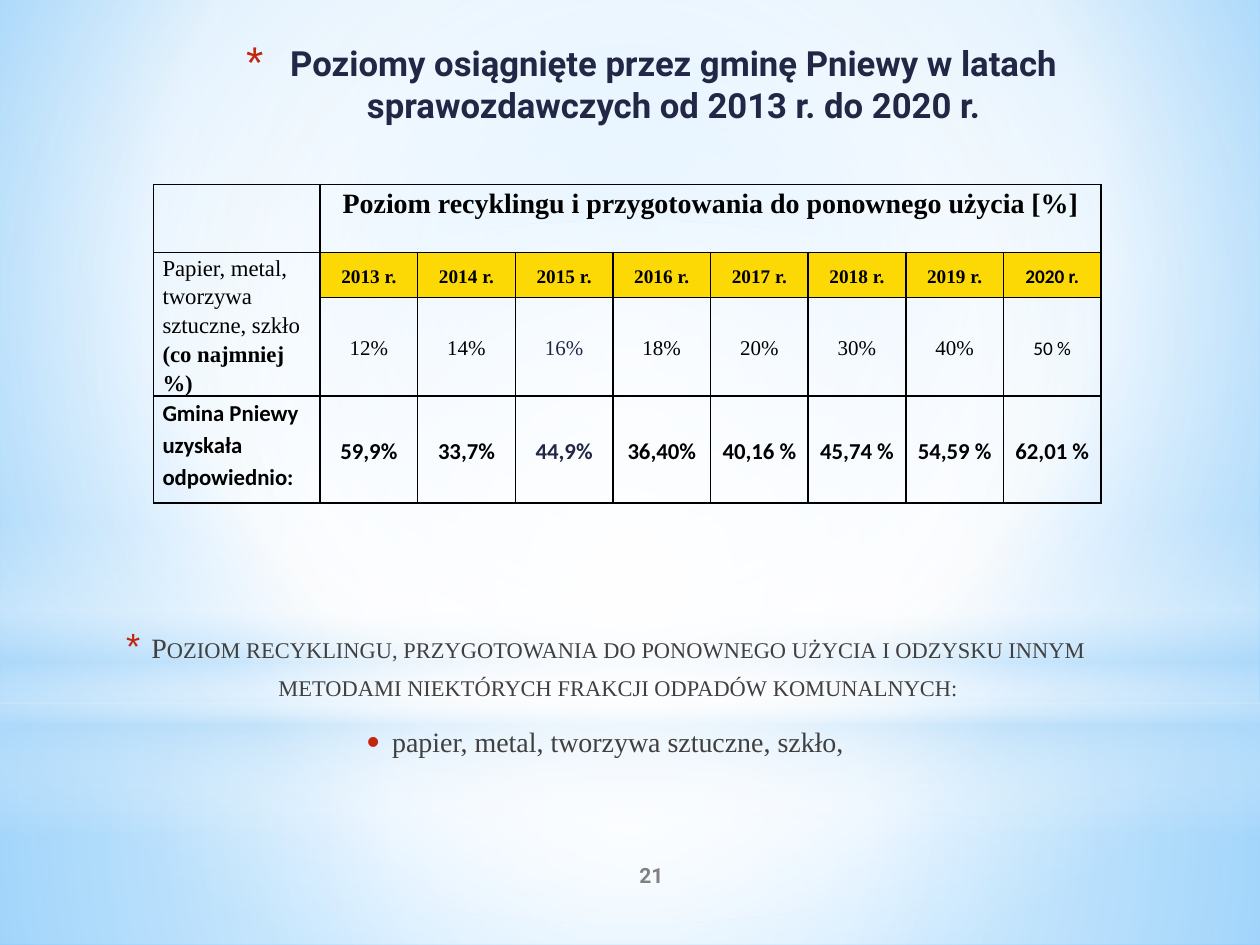
from pptx import Presentation, util as u
from pptx.dml.color import RGBColor
from pptx.enum import shapes, text
from pptx.oxml import parse_xml
from pptx.oxml.ns import nsdecls, qn

W, H = 10, 7.5


class Theme:
    navy, grey, dim, black = "212745", "404040", "808080", "000000"
    red, gold, white, sky = "C3260C", "FCD904", "FFFFFF", "B4DCFA"
    sans, serif, plain = "Roboto", "Times New Roman", "Calibri"
    title, head, label, cell, year, page = 19.8, 16, 13, 12, 11, 12


YEARS = [f"{y} r." for y in range(2013, 2021)]
GOALS = ["12%", "14%", "16%", "18%", "20%", "30%", "40%", "50 %"]
RATES = ["59,9%", "33,7%", "44,9%", "36,40%",
         "40,16 %", "45,74 %", "54,59 %", "62,01 %"]


def box(x, y, w, h):
    """Turn shares of the slide into left, top, width and height."""
    return [u.Inches(v) for v in (x * W, y * H, w * W, h * H)]


def add_run(para, words, size, face, color, bold=False):
    run = para.add_run()
    run.text = words
    font = run.font
    font.size, font.name, font.bold = u.Pt(size), face, bold
    font.color.rgb = RGBColor.from_string(color)
    return run


def set_grad(fill, root, stops, focus=None):
    """Give a fill (position, colour, opacity) stops, round if it has a focus."""
    fill.gradient()
    old = root.find(".//" + qn("a:gradFill"))
    marks = "".join(
        f'<a:gs pos="{p * 1000}"><a:srgbClr val="{c}">'
        f'<a:alpha val="{o * 1000}"/></a:srgbClr></a:gs>' for p, c, o in stops)
    way = '<a:lin ang="5400000" scaled="0"/>'
    if focus:
        rect = " ".join(f'{s}="{v * 1000}"' for s, v in zip("ltrb", focus))
        way = f'<a:path path="circle"><a:fillToRect {rect}/></a:path>'
    new = parse_xml(f'<a:gradFill {nsdecls("a")} rotWithShape="1">'
                    f'<a:gsLst>{marks}</a:gsLst>{way}</a:gradFill>')
    old.getparent().replace(old, new)


def add_glow(slide, kind, area, stops, focus=None):
    glow = slide.shapes.add_shape(kind, *box(*area))
    glow.shadow.inherit = False
    glow.line.fill.background()
    set_grad(glow.fill, glow._element, stops, focus)
    return glow


def add_back(slide):
    t, kind = Theme, shapes.MSO_SHAPE
    mid = (50, 50, 50, 50)
    set_grad(slide.background.fill, slide._element,
             [(0, "9ED5FF", 100), (60, t.white, 100), (100, "5BB9FF", 100)],
             (20, 10, 20, 60))
    split = 0.744
    glows = [
        (kind.RECTANGLE, (0, split, 1, 1 - split),
         [(0, t.white, 91), (37, t.white, 76), (100, t.sky, 79)], mid),
        (kind.RECTANGLE, (0, 0, 1, split),
         [(0, t.white, 89), (48, t.white, 62), (100, t.sky, 79)], mid),
        (kind.RECTANGLE, (0, 0.55, 1, 0.333),
         [(0, t.white, 0), (29, t.white, 30), (45, t.sky, 40),
          (55, t.white, 26), (65, t.sky, 60), (100, t.white, 0)], None),
        (kind.OVAL, (0, 0.233, 1, split),
         [(0, t.white, 100), (56, t.white, 0)], mid),
    ]
    tree = slide.shapes._spTree
    for i, glow in enumerate(glows):
        tree.insert(2 + i, add_glow(slide, *glow)._element)


def set_bullet(para, mark, scale, left, hang):
    props = para._p.get_or_add_pPr()
    props.set("marL", str(u.Inches(left)))
    props.set("indent", str(-u.Inches(hang)))
    for part in (f'buClr {nsdecls("a")}><a:srgbClr val="{Theme.red}"/></a:buClr',
                 f'buSzPct {nsdecls("a")} val="{scale * 1000}"/',
                 f'buFont {nsdecls("a")} typeface="Arial"/',
                 f'buChar {nsdecls("a")} char="{mark}"/'):
        props.append(parse_xml(f"<a:{part}>"))


def place(shape, area):
    shape.left, shape.top, shape.width, shape.height = box(*area)
    frame = shape.text_frame
    frame.word_wrap = True
    frame.auto_size = text.MSO_AUTO_SIZE.NONE
    frame.vertical_anchor = text.MSO_ANCHOR.TOP
    return frame


def fill_title(slide):
    t = Theme
    para = place(slide.shapes.title, (0.161, 0.038, 0.712, 0.167)).paragraphs[0]
    para.alignment = text.PP_ALIGN.CENTER
    set_bullet(para, "*", 128, 0.35, 0.35)
    add_run(para, "Poziomy osiągnięte przez gminę Pniewy w latach "
            "sprawozdawczych od 2013 r. do 2020 r.", t.title, t.sans, t.navy, True)


def fill_body(slide):
    t = Theme
    frame = place(slide.placeholders[1], (0.067, 0.595, 0.822, 0.284))
    frame.margin_top = u.Inches(0.5)
    items = [("*", "Poziom recyklingu, przygotowania do ponownego użycia i odzysku "
              "innym metodami niektórych frakcji odpadów komunalnych:", 3, 10, "small"),
             ("•", "papier, metal, tworzywa sztuczne, szkło,", 0, 3, "none")]
    for i, (mark, words, before, after, caps) in enumerate(items):
        para = frame.add_paragraph() if i else frame.paragraphs[0]
        para.alignment = text.PP_ALIGN.CENTER
        para.line_spacing = 1.15
        para.space_before, para.space_after = u.Pt(before), u.Pt(after)
        set_bullet(para, mark, 130, 0.25, 0.2)
        run = add_run(para, words, t.head, t.serif, t.grey)
        run._r.get_or_add_rPr().set("cap", caps)


def set_edges(cell):
    props = cell._tc.get_or_add_tcPr()
    for i, side in enumerate("LRTB"):
        props.insert(i, parse_xml(
            f'<a:ln{side} {nsdecls("a")} w="12700"><a:solidFill>'
            f'<a:srgbClr val="{Theme.black}"/></a:solidFill></a:ln{side}>'))


def fill_cell(cell, *runs, center=True, middle=True):
    """Write the runs in one paragraph, each on a line of its own."""
    if middle:
        cell.vertical_anchor = text.MSO_ANCHOR.MIDDLE
    para = cell.text_frame.paragraphs[0]
    para.line_spacing = 1.15
    para.alignment = text.PP_ALIGN.CENTER if center else text.PP_ALIGN.LEFT
    for i, run in enumerate(runs):
        if i:
            para.add_line_break()
        add_run(para, *run)


def add_grid(slide):
    t = Theme
    cols = [1.32] + [0.775] * len(YEARS)
    rows = [0.54, 0.36, 0.78, 0.85]
    grid = slide.shapes.add_table(len(rows), len(cols),
                                  *box(0.122, 0.195, 0.752, 0.337)).table
    grid.first_row = grid.horz_banding = False
    for col, width in zip(grid.columns, cols):
        col.width = u.Inches(width)
    for row, height in zip(grid.rows, rows):
        row.height = u.Inches(height)
    for cell in grid.iter_cells():
        cell.fill.background()
        cell.margin_left = cell.margin_right = u.Inches(0.07)
        cell.margin_top = cell.margin_bottom = 0
        set_edges(cell)
    grid.cell(0, 1).merge(grid.cell(0, len(YEARS)))
    grid.cell(1, 0).merge(grid.cell(2, 0))

    fill_cell(grid.cell(0, 1),
              ("Poziom recyklingu i przygotowania do ponownego użycia [%]",
               t.head, t.serif, t.black, True), middle=False)
    fill_cell(grid.cell(1, 0),
              ("Papier, metal, tworzywa sztuczne, szkło", t.label, t.serif, t.black),
              ("(co najmniej %)", t.label, t.serif, t.black, True),
              center=False, middle=False)
    fill_cell(grid.cell(3, 0),
              ("Gmina Pniewy uzyskała odpowiednio:", t.label, t.plain, t.black, True),
              center=False, middle=False)
    for c, (year, goal, rate) in enumerate(zip(YEARS, GOALS, RATES), 1):
        last = c == len(YEARS)
        face = t.plain if last else t.serif
        ink = t.navy if year == "2015 r." else t.black
        cell = grid.cell(1, c)
        cell.fill.solid()
        cell.fill.fore_color.rgb = RGBColor.from_string(t.gold)
        fill_cell(cell, (year, t.year, face, t.black, True))
        fill_cell(grid.cell(2, c), (goal, t.year if last else t.cell, face, ink))
        fill_cell(grid.cell(3, c), (rate, t.label, t.plain, ink, True))


def add_page(slide):
    t = Theme
    area = (0.417, 0.9, 0.2, 0.053)
    frame = place(slide.shapes.add_textbox(*box(*area)), area)
    frame.vertical_anchor = text.MSO_ANCHOR.MIDDLE
    para = frame.paragraphs[0]
    para.alignment = text.PP_ALIGN.CENTER
    add_run(para, "21", t.page, t.sans, t.dim, True)


def main():
    deck = Presentation()
    deck.slide_width, deck.slide_height = u.Inches(W), u.Inches(H)
    slide = deck.slides.add_slide(deck.slide_layouts[1])
    add_back(slide)
    fill_title(slide)
    fill_body(slide)
    add_grid(slide)
    add_page(slide)
    deck.save("out.pptx")


if __name__ == "__main__":
    main()
